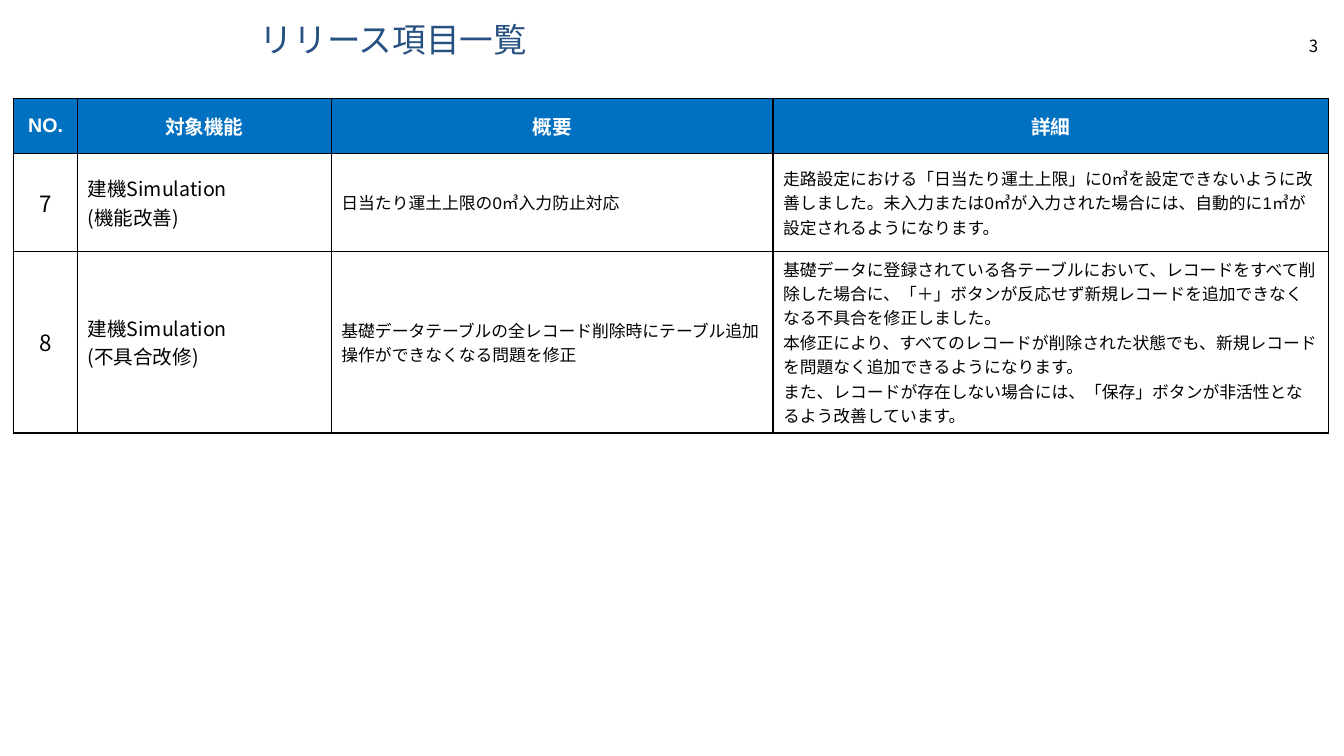
from dataclasses import dataclass

from lxml.etree import SubElement
from pptx import Presentation
from pptx.dml.color import RGBColor
from pptx.enum.text import MSO_ANCHOR, PP_ALIGN
from pptx.oxml.ns import qn
from pptx.util import Cm, Pt


@dataclass(frozen=True)
class Theme:
    latin: str = "Arial"
    asian: str = "Noto Sans CJK JP"
    title: str = "265180"
    head: str = "0070C0"
    paper: str = "FFFFFF"
    ink: str = "000000"
    big: int = 24
    number: int = 16
    label: int = 14
    small: int = 12


THEME = Theme()
WIDTHS = (1.6, 6.4, 11.13, 14)
HEIGHTS = (1.39, 2.46, 4.58)
HEADS = ("NO.", "対象機能", "概要", "詳細")
ITEMS = (
    (
        "7",
        "建機Simulation\n(機能改善)",
        "日当たり運土上限の0㎥入力防止対応",
        "走路設定における「日当たり運土上限」に0㎥を設定できないように改善しました。"
        "未入力または0㎥が入力された場合には、自動的に1㎥が設定されるようになります。",
    ),
    (
        "8",
        "建機Simulation\n(不具合改修)",
        "基礎データテーブルの全レコード削除時にテーブル追加操作ができなくなる問題を修正",
        "基礎データに登録されている各テーブルにおいて、レコードをすべて削除した場合に、"
        "「＋」ボタンが反応せず新規レコードを追加できなくなる不具合を修正しました。\n"
        "本修正により、すべてのレコードが削除された状態でも、"
        "新規レコードを問題なく追加できるようになります。\n"
        "また、レコードが存在しない場合には、「保存」ボタンが非活性となるよう改善しています。",
    ),
)
HEAD_STYLE = (THEME.label, THEME.latin, THEME.paper, PP_ALIGN.CENTER, True)
ITEM_STYLES = (
    (THEME.number, THEME.asian, THEME.ink, PP_ALIGN.CENTER, False),
    (THEME.label, THEME.asian, THEME.ink, PP_ALIGN.LEFT, False),
    (THEME.small, THEME.latin, THEME.ink, PP_ALIGN.LEFT, False),
    (THEME.small, THEME.latin, THEME.ink, PP_ALIGN.LEFT, False),
)


def write(frame, text, size, face, color, align, bold=False):
    frame.text = text
    for para in frame.paragraphs:
        para.alignment = align
        font = para.font
        font.size = Pt(size)
        font.name = face
        font.bold = bold
        font.color.rgb = RGBColor.from_string(color)


def add_text(slide, box, text, *style):
    frame = slide.shapes.add_textbox(*map(Cm, box)).text_frame
    frame.word_wrap = True
    frame.vertical_anchor = MSO_ANCHOR.MIDDLE
    write(frame, text, *style)
    return frame


def add_header(slide, box):
    left, top, width, height = box
    frame = add_text(slide, (left + 6.3, top, 22.66, height), "リリース項目一覧",
                     THEME.big, THEME.latin, THEME.title, PP_ALIGN.LEFT)
    frame.paragraphs[0].line_spacing = 0.9
    add_text(slide, (left + width - 1.76, top + 0.25, 1.76, 0.76), "3",
             THEME.small, THEME.asian, THEME.ink, PP_ALIGN.RIGHT)


def add_border(cell):
    props = cell._tc.get_or_add_tcPr()
    for place, side in enumerate(("lnL", "lnR", "lnT", "lnB")):
        line = SubElement(props, qn(f"a:{side}"), w=str(Pt(1)))
        fill = SubElement(line, qn("a:solidFill"))
        SubElement(fill, qn("a:srgbClr"), val=THEME.ink)
        props.insert(place, line)


def fill_cell(cell, text, color, style):
    cell.vertical_anchor = MSO_ANCHOR.MIDDLE
    cell.fill.solid()
    cell.fill.fore_color.rgb = RGBColor.from_string(color)
    add_border(cell)
    write(cell.text_frame, text, *style)


def add_items(slide, box):
    rows = (HEADS, *ITEMS)
    table = slide.shapes.add_table(len(rows), len(HEADS), *map(Cm, box)).table
    for column, width in zip(table.columns, WIDTHS):
        column.width = Cm(width)
    for row, height in zip(table.rows, HEIGHTS):
        row.height = Cm(height)
    for r, texts in enumerate(rows):
        color = THEME.paper if r else THEME.head
        styles = ITEM_STYLES if r else [HEAD_STYLE] * len(HEADS)
        for c, (text, style) in enumerate(zip(texts, styles)):
            fill_cell(table.cell(r, c), text, color, style)


def main():
    deck = Presentation()
    deck.slide_width, deck.slide_height = Cm(33.87), Cm(19.05)
    slide = deck.slides.add_slide(deck.slide_layouts[6])
    add_header(slide, (0, 0.52, 33.47, 1.07))
    add_items(slide, (0.35, 2.48, sum(WIDTHS), sum(HEIGHTS)))
    deck.save("out.pptx")


if __name__ == "__main__":
    main()
